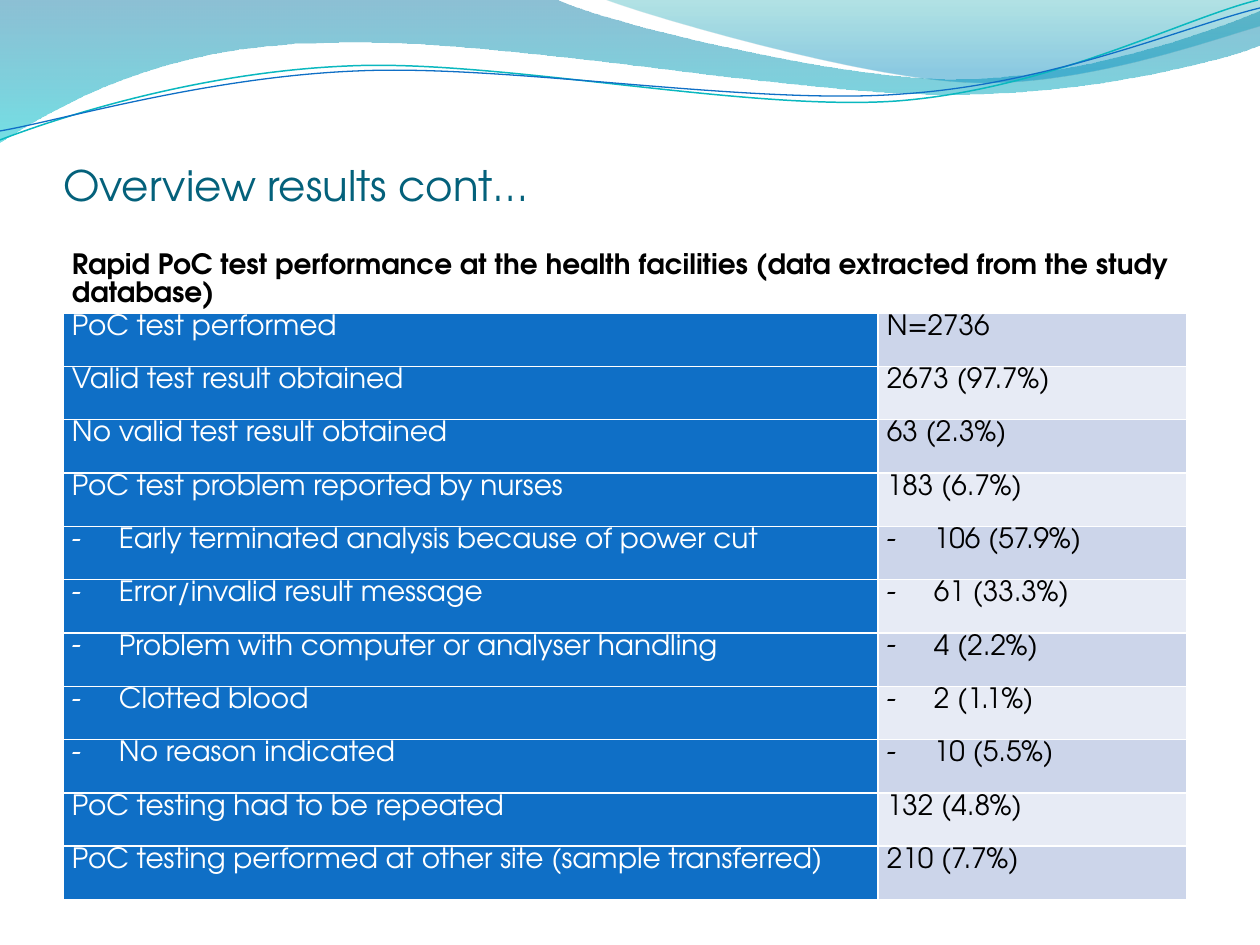
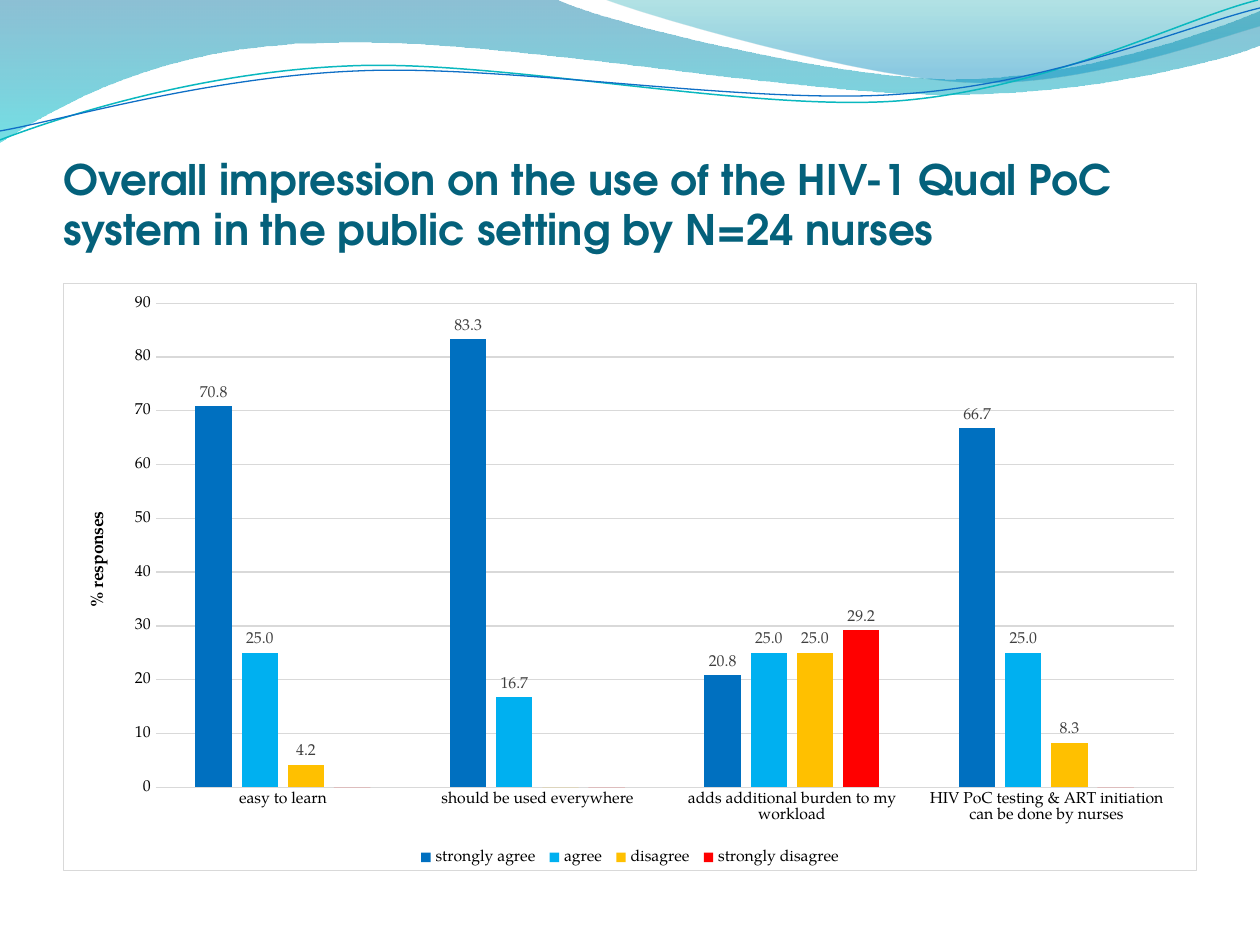
from lxml import etree
from pptx import Presentation
from pptx.chart.data import CategoryChartData
from pptx.dml.color import RGBColor
from pptx.enum.chart import XL_CHART_TYPE, XL_LABEL_POSITION, XL_LEGEND_POSITION, XL_TICK_MARK
from pptx.enum.text import MSO_ANCHOR, MSO_AUTO_SIZE, PP_ALIGN
from pptx.oxml.ns import qn
from pptx.util import Pt

COLUMNS = XL_CHART_TYPE.COLUMN_CLUSTERED
OUTSIDE_END = XL_LABEL_POSITION.OUTSIDE_END
LEGEND_BOTTOM = XL_LEGEND_POSITION.BOTTOM
NO_TICK = XL_TICK_MARK.NONE
BOTTOM, TOP = MSO_ANCHOR.BOTTOM, MSO_ANCHOR.TOP
NO_AUTOFIT = MSO_AUTO_SIZE.NONE
LEFT = PP_ALIGN.LEFT

EMU_PER_PX = 914400 / 126
SANS, SERIF = "TeX Gyre Adventor", "TeX Gyre Pagella"
COLORS = {
    "title": "04617B", "text": "000000", "white": "FFFFFF", "blue": "0F6FC6",
    "band_dark": "CCD5EA", "band_light": "E7EBF5", "grid": "D9D9D9", "label": "404040",
    "strongly agree": "0070C0", "agree": "00B0F0",
    "disagree": "FFC000", "strongly disagree": "FF0000",
    "wave_top": "0074A1", "wave_bottom": "00C6CF",
    "sheen_top": "00A1A9", "sheen_bottom": "008BBF", "teal_line": "0AB8BF",
}

# Outlines in px: a start point, then lines (2 numbers) or Bezier curves (6 numbers).
WAVE = [(0, 0), (557, 0), (600, 21, 837, 79, 955, 79), (1075, 79, 1207, 33, 1260, 11),
        (1260, 45), (1239, 55, 1096, 96, 940, 94), (784, 94, 481, 35, 324, 43),
        (163, 45, 58, 105, 0, 142)]
SHEEN = [(606, 0), (641, 14, 859, 78, 969, 82), (1079, 87, 1211, 40, 1260, 26), (1260, 0)]
TEAL_LINE = [(0, 140), (60, 117, 199, 72, 349, 66), (498, 59, 747, 112, 898, 101),
             (1050, 89, 1182, 19, 1258, 0)]
BLUE_LINE = [(0, 131), (59, 121, 207, 77, 357, 71), (508, 64, 752, 106, 903, 94),
             (1053, 84, 1186, 26, 1260, 8)]
# Gradient stops: colour, position, opacity in percent.
FILLED_BANDS = [
    (WAVE, [("wave_top", 0, 45), ("wave_bottom", 1, 55)]),
    (SHEEN, [("sheen_top", 0, 30), ("sheen_bottom", 0.8, 45)]),
]
LINE_BANDS = [(TEAL_LINE, "teal_line", 0.85), (BLUE_LINE, "blue", 0.75)]

TEST_HEADING = ("Rapid PoC test performance at the health facilities "
                "(data extracted from the study database)")
# Label, value, whether the row is a dashed sub-item.
TEST_ROWS = [
    ("PoC test performed", "N=2736", False),
    ("Valid test result obtained", "2673 (97.7%)", False),
    ("No valid test result obtained", "63 (2.3%)", False),
    ("PoC test problem reported by nurses", "183 (6.7%)", False),
    ("Early terminated analysis because of power cut", "106 (57.9%)", True),
    ("Error/invalid result message", "61 (33.3%)", True),
    ("Problem with computer or analyser handling", "4 (2.2%)", True),
    ("Clotted blood", "2 (1.1%)", True),
    ("No reason indicated", "10 (5.5%)", True),
    ("PoC testing had to be repeated", "132 (4.8%)", False),
    ("PoC testing performed at other site (sample transferred)", "210 (7.7%)", False),
]
STATEMENTS = ["easy to learn", "should be used everywhere",
              "adds additional burden to my workload",
              "HIV PoC testing & ART initiation can be done by nurses"]
RESPONSES = {
    "strongly agree ": (70.8, 83.3, 20.8, 66.7),
    "agree ": (25, 16.7, 25, 25),
    "disagree ": (4.2, 0, 25, 8.3),
    "strongly disagree": (0, 0, 29.2, 0),
}


def px(length):
    return round(length * EMU_PER_PX)


def rgb(name):
    return RGBColor.from_string(COLORS[name])


def set_font(font, name, size, color, bold=False):
    font.name, font.size, font.bold = name, Pt(size), bold
    font.color.rgb = rgb(color)


def add_solid_fill(parent, color):
    fill = etree.SubElement(parent, qn("a:solidFill"))
    etree.SubElement(fill, qn("a:srgbClr"), val=COLORS[color])


def add_line(parent, tag, color, width):
    line = etree.SubElement(parent, qn(tag), w=str(Pt(width)))
    add_solid_fill(line, color)


class SlideWriter:
    def __init__(self, deck):
        self.deck = deck
        self.slide = None

    def start(self, title, height, bold=False):
        self.slide = self.deck.slides.add_slide(self.deck.slide_layouts[5])
        self.title(title, height, bold)

    def master_bands(self):
        """Draw the waves on the current slide and hand them to the master."""
        shapes = [self.filled_band(*band) for band in FILLED_BANDS]
        shapes += [self.line_band(*band) for band in LINE_BANDS]
        tree = self.deck.slide_master.shapes.element
        for index, shape in enumerate(shapes):
            shape.element.nvSpPr.cNvPr.set("id", str(100 + index))
            tree.insert(2 + index, shape.element)

    def outline(self, outline, close):
        points = [(px(segment[i]), px(segment[i + 1]))
                  for segment in outline for i in range(0, len(segment), 2)]
        builder = self.slide.shapes.build_freeform(*points[0])
        builder.add_line_segments(points[1:], close=close)
        shape = builder.convert_to_shape()
        shape.shadow.inherit = False
        # Join the three points of each curve into one Bezier segment.
        steps = iter(list(shape.element.iter(qn("a:lnTo"))))
        for segment in outline[1:]:
            step = next(steps)
            if len(segment) == 6:
                curve = etree.Element(qn("a:cubicBezTo"))
                step.addprevious(curve)
                for part in (step, next(steps), next(steps)):
                    curve.append(part[0])
                    part.getparent().remove(part)
        return shape

    def filled_band(self, outline, stops):
        shape = self.outline(outline, True)
        shape.line.fill.background()
        shape.fill.gradient()
        shape.fill.gradient_angle = 270
        for stop, (color, position, _) in zip(shape.fill.gradient_stops, stops):
            stop.color.rgb, stop.position = rgb(color), position
        for node, (_, _, opacity) in zip(shape.element.iter(qn("a:srgbClr")), stops):
            etree.SubElement(node, qn("a:alpha"), val=str(opacity * 1000))
        return shape

    def line_band(self, outline, color, width):
        shape = self.outline(outline, False)
        shape.fill.background()
        shape.line.color.rgb = rgb(color)
        shape.line.width = Pt(width)
        return shape

    def title(self, text, height, bold):
        box = self.slide.shapes.title
        box.left, box.top, box.width, box.height = px(63), px(97), px(1144), px(height)
        frame = box.text_frame
        frame.text = text
        frame.word_wrap, frame.auto_size = True, NO_AUTOFIT
        frame.vertical_anchor = BOTTOM
        frame.margin_left = frame.margin_right = frame.margin_bottom = 0
        frame.margin_top = px(6)
        para = frame.paragraphs[0]
        para.alignment = LEFT
        set_font(para.runs[0].font, SANS, 24, "title", bold)

    def cell(self, cell, text, color, fill=None, bold=False, dashed=False):
        # Borders go in before the fill, as the schema asks.
        properties = cell._tc.get_or_add_tcPr()
        for side in "LRTB":
            add_line(properties, f"a:ln{side}", "white", 1)
        if fill:
            cell.fill.solid()
            cell.fill.fore_color.rgb = rgb(fill)
        else:
            cell.fill.background()
        cell.margin_left = cell.margin_right = px(9)
        cell.margin_top = cell.margin_bottom = 0
        cell.vertical_anchor = TOP
        cell.text_frame.text = text
        para = cell.text_frame.paragraphs[0]
        para.line_spacing = 1.07
        set_font(para.runs[0].font, SANS, 16, color, bold)
        if dashed:
            settings = para._p.get_or_add_pPr()
            settings.set("marL", str(px(47)))
            settings.set("indent", str(-px(47)))
            etree.SubElement(settings, qn("a:buFont"), typeface=SERIF)
            etree.SubElement(settings, qn("a:buChar"), char="-")

    def table(self, heading, rows):
        heading_height, body_height = px(61), px(587)
        frame = self.slide.shapes.add_table(len(rows) + 1, 2, px(63), px(252), px(1124),
                                            heading_height + body_height)
        table = frame.table
        table.columns[0].width, table.columns[1].width = px(815), px(309)
        for row in table.rows:
            row.height = body_height // len(rows)
        table.rows[0].height = heading_height
        table.cell(0, 0).merge(table.cell(0, 1))
        self.cell(table.cell(0, 0), heading, "text", bold=True)
        for index, (label, value, dashed) in enumerate(rows, 1):
            band = "band_dark" if index % 2 else "band_light"
            self.cell(table.cell(index, 0), label, "white", "blue", dashed=dashed)
            self.cell(table.cell(index, 1), value, "text", band, dashed=dashed)

    def chart(self, categories, responses, axis_title):
        data = CategoryChartData(number_format="0.0")
        data.categories = categories
        for name, values in responses.items():
            data.add_series(name, values)
        chart = self.slide.shapes.add_chart(COLUMNS, px(63), px(283), px(1134), px(588),
                                            data).chart
        set_font(chart.font, SERIF, 10, "text")
        chart.has_title = False

        # Frame around the chart
        frame = etree.Element(qn("c:spPr"))
        add_solid_fill(frame, "white")
        add_line(frame, "a:ln", "grid", 0.75)
        chart.element.find(qn("c:chart")).addnext(frame)

        # Legend
        chart.has_legend = True
        chart.legend.position = LEGEND_BOTTOM
        chart.legend.include_in_layout = False
        set_font(chart.legend.font, SERIF, 9, "text")

        # Axes
        category_axis, value_axis = chart.category_axis, chart.value_axis
        for axis in (category_axis, value_axis):
            axis.major_tick_mark = axis.minor_tick_mark = NO_TICK
            set_font(axis.tick_labels.font, SERIF, 9, "text")
        value_axis.minimum_scale, value_axis.maximum_scale = 0, 90
        value_axis.major_unit = 10
        value_axis.tick_labels.number_format = "0"
        value_axis.tick_labels.number_format_is_linked = False
        value_axis.format.line.fill.background()
        for line in (category_axis.format.line, value_axis.major_gridlines.format.line):
            line.color.rgb, line.width = rgb("grid"), Pt(0.75)
        title_frame = value_axis.axis_title.text_frame
        title_frame.text = axis_title
        set_font(title_frame.paragraphs[0].runs[0].font, SERIF, 10, "text", True)

        # Columns and their labels; zeros stay unlabelled
        plot = chart.plots[0]
        plot.gap_width, plot.overlap, plot.vary_by_categories = 219, -27, False
        for series in plot.series:
            series.format.fill.solid()
            series.format.fill.fore_color.rgb = rgb(series.name.strip())
            labels = series.data_labels
            labels.show_value, labels.position = True, OUTSIDE_END
            labels.number_format, labels.number_format_is_linked = "0.0", False
            set_font(labels.font, SERIF, 9, "label")
            zeros = [index for index, value in enumerate(series.values) if value == 0]
            for position, index in enumerate(zeros):
                hidden = etree.Element(qn("c:dLbl"))
                etree.SubElement(hidden, qn("c:idx"), val=str(index))
                etree.SubElement(hidden, qn("c:delete"), val="1")
                labels._element.insert(position, hidden)


def main():
    deck = Presentation()
    deck.slide_width, deck.slide_height = px(1260), px(945)
    writer = SlideWriter(deck)

    # Test performance table
    writer.start("Overview results cont…", 113)
    writer.master_bands()
    writer.table(TEST_HEADING, TEST_ROWS)

    # Nurses' opinions chart
    writer.start("Overall impression on the use of the HIV-1 Qual PoC system "
                 "in the public setting by N=24 nurses", 157, bold=True)
    writer.chart(STATEMENTS, RESPONSES, "% responses")

    deck.save("out.pptx")


if __name__ == "__main__":
    main()
